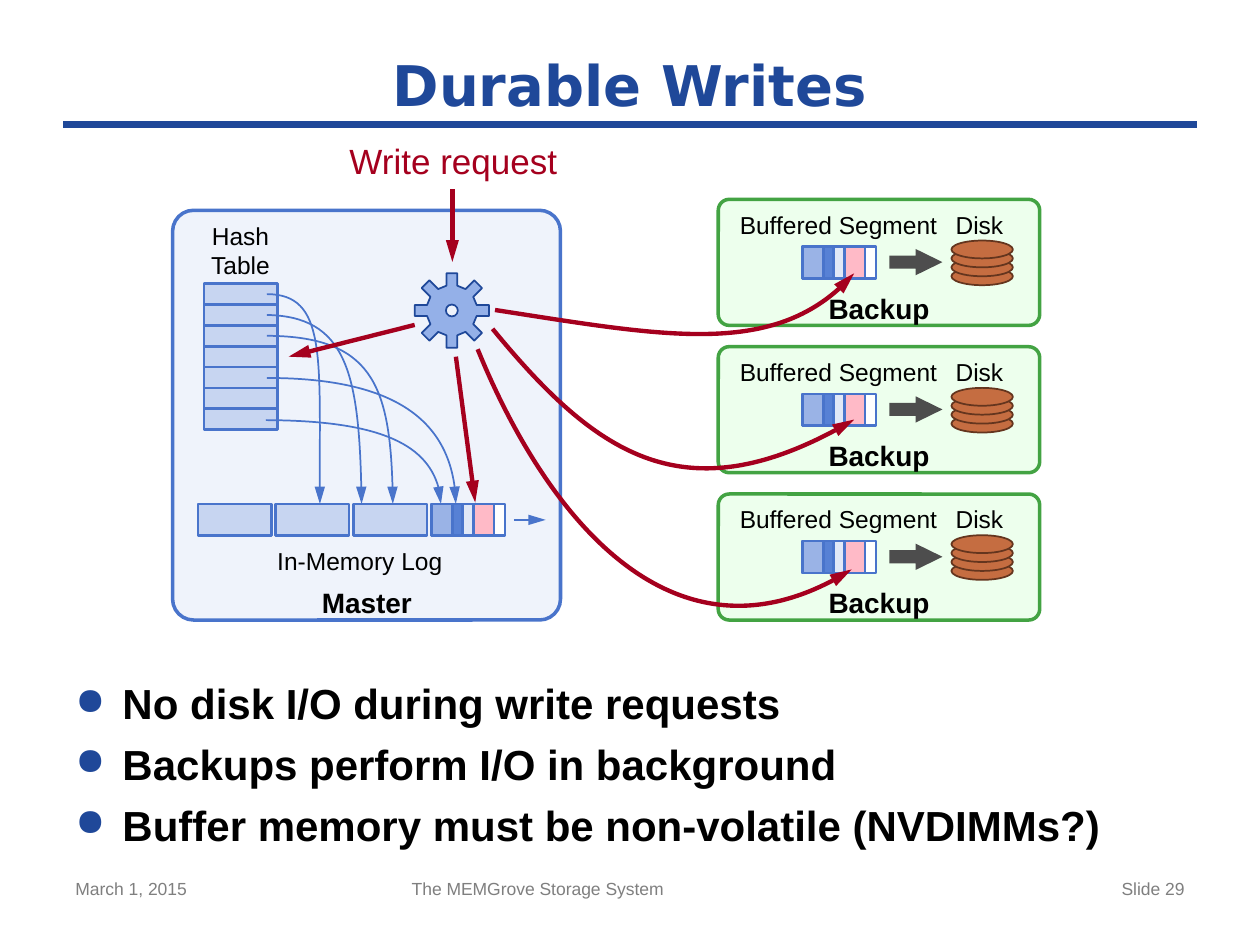
from math import cos, pi, sin

from lxml.etree import SubElement
from pptx import Presentation
from pptx.dml.color import RGBColor
from pptx.enum.shapes import MSO_CONNECTOR, MSO_SHAPE as SHAPE
from pptx.enum.text import MSO_ANCHOR as ANCHOR, PP_ALIGN as ALIGN
from pptx.oxml.ns import qn
from pptx.util import Cm, Pt

# Content: all lengths in centimetres
NAVY, BLUE, RED = "1F4899", "4974CB", "A5001E"
PALE, LIGHT = "EFF3FB", "C7D5F1"
BULLETS = [
    "No disk I/O during write requests",
    "Backups perform I/O in background",
    "Buffer memory must be non-volatile (NVDIMMs?)",
]
FOOTERS = [
    ("March 1, 2015", 1.27, 5.92, ALIGN.LEFT),
    ("The MEMGrove Storage System", 8.05, 9.53, ALIGN.LEFT),
    ("Slide 29", 18.21, 5.92, ALIGN.RIGHT),
]
SEGMENT_W, SEGMENT_H = 1.48, 0.64
OBJECTS = [(0.42, "9AB3E6"), (0.21, "5781D5"), (0.21, "E1E8F7"), (0.42, "FFBAC7")]
BACKUP_LEFT, BACKUP_TOP, BACKUP_STEP, BACKUP_COUNT = 14.48, 4.02, 2.97, 3
HASH_LEFT, HASH_TOP, HASH_ROWS, ROW_H = 4.11, 5.72, 7, 0.42
LOG_LEFT, LOG_TOP, LOG_STEP, FULL_SEGMENTS = 3.99, 10.16, 1.57, 3
GEAR_X, GEAR_Y, TEETH = 9.11, 6.26, 8
# Curves: start, two control points, end
HASH_POINTERS = [
    [(5.38, 5.93), (6.58, 5.93), (6.43, 7.29), (6.45, 10.16)],
    [(5.38, 6.35), (6.96, 6.38), (7.26, 7.59), (7.29, 10.16)],
    [(5.38, 6.77), (7.49, 6.78), (7.9, 7.87), (7.92, 10.16)],
    [(5.38, 7.62), (7.77, 7.62), (9.17, 8.46), (9.19, 10.16)],
    [(5.36, 8.47), (7.57, 8.48), (8.86, 9.02), (8.89, 10.16)],
]
REPLICATION = [
    [(9.98, 6.25), (13.28, 6.76), (15.72, 7.24), (17.22, 5.51)],
    [(9.93, 6.63), (11.99, 9.14), (13.87, 10.44), (17.22, 8.46)],
    [(9.63, 7.04), (10.9, 10.16), (13.54, 13.77), (17.17, 11.48)],
]
WRITE_STEPS = [
    ((9.12, 3.81), (9.12, 5.28)),
    ((8.36, 6.55), (5.82, 7.19)),
    ((9.19, 7.19), (9.58, 10.13)),
]

deck = Presentation()
deck.slide_width, deck.slide_height = Cm(25.4), Cm(19.05)
page = deck.slides.add_slide(deck.slide_layouts[6])


# Drawing helpers
def rgb(color):
    return RGBColor.from_string(color)


def paint(shape, fill=None, line=None, weight=1.5):
    shape.shadow.inherit = False
    if fill:
        shape.fill.solid()
        shape.fill.fore_color.rgb = rgb(fill)
    else:
        shape.fill.background()
    if line:
        shape.line.color.rgb = rgb(line)
        shape.line.width = Pt(weight)
    else:
        shape.line.fill.background()


def add_part(kind, left, top, width, height, adjust=(), **style):
    shape = page.shapes.add_shape(kind, Cm(left), Cm(top), Cm(width), Cm(height))
    for index, value in enumerate(adjust):
        shape.adjustments[index] = value
    paint(shape, **style)


def add_text(text, left, top, width, height, size=14, color="000000", bold=False,
             font="Arial", align=ALIGN.CENTER, anchor=ANCHOR.TOP, wrap=False,
             tight=True, bullet=False):
    box = page.shapes.add_textbox(Cm(left), Cm(top), Cm(width), Cm(height))
    frame = box.text_frame
    frame.word_wrap, frame.vertical_anchor = wrap, anchor
    if tight:
        frame.margin_left = frame.margin_right = frame.margin_top = frame.margin_bottom = 0
    for index, line in enumerate(text.split("\n")):
        para = frame.paragraphs[0] if index == 0 else frame.add_paragraph()
        para.alignment = align
        span = para.add_run()
        span.text = line
        span.font.name, span.font.size, span.font.bold = font, Pt(size), bold
        span.font.color.rgb = rgb(color)
        if bullet:
            para.space_before = Pt(6)
            props = para._p.get_or_add_pPr()
            props.set("marL", str(Cm(0.95)))
            props.set("indent", str(-Cm(0.95)))
            SubElement(SubElement(props, qn("a:buClr")), qn("a:srgbClr"), val=NAVY)
            SubElement(props, qn("a:buSzPct"), val="90000")
            SubElement(props, qn("a:buChar"), char="●")


def add_arrowhead(shape):
    SubElement(shape.line._get_or_add_ln(), qn("a:tailEnd"), type="triangle", w="med", len="lg")


def add_line(start, end, color=BLUE, weight=1.5, arrow=False):
    line = page.shapes.add_connector(MSO_CONNECTOR.STRAIGHT, *map(Cm, start + end))
    line.line.color.rgb, line.line.width = rgb(color), Pt(weight)
    if arrow:
        add_arrowhead(line)
    SubElement(line._element.spPr, qn("a:effectLst"))


def add_outline(points, close):
    points = [(Cm(x), Cm(y)) for x, y in points]
    builder = page.shapes.build_freeform(*points[0])
    builder.add_line_segments(points[1:], close=close)
    return builder.convert_to_shape()


def add_curve(controls, color, weight):
    def at(t):
        shares = [(1 - t) ** 3, 3 * t * (1 - t) ** 2, 3 * t * t * (1 - t), t ** 3]
        return [sum(s * c[axis] for s, c in zip(shares, controls)) for axis in (0, 1)]

    # Sampled points give the extent, then one Bezier segment replaces them
    shape = add_outline([at(step / 20) for step in range(21)], close=False)
    track = shape._element.spPr.find(".//" + qn("a:path"))
    for child in list(track):
        track.remove(child)
    move, bezier = (SubElement(track, qn(tag)) for tag in ("a:moveTo", "a:cubicBezTo"))
    for parent, (x, y) in zip([move] + [bezier] * 3, controls[:1] + controls[1:]):
        SubElement(parent, qn("a:pt"), x=str(Cm(x) - shape.left), y=str(Cm(y) - shape.top))
    paint(shape, line=color, weight=weight)
    add_arrowhead(shape)


def add_open_segment(left, top):
    add_part(SHAPE.RECTANGLE, left, top, SEGMENT_W, SEGMENT_H, fill="FFFFFF", line=BLUE)
    for width, fill in OBJECTS:
        add_part(SHAPE.RECTANGLE, left, top, width, SEGMENT_H, fill=fill, line=BLUE)
        left += width


def add_backup(left, top):
    add_part(SHAPE.ROUNDED_RECTANGLE, left, top, 6.48, 2.54, [0.087],
             fill="EDFFED", line="43A343", weight=2)
    add_open_segment(left + 1.7, top + 0.95)
    for disk in range(4):
        add_part(SHAPE.OVAL, left + 4.7, top + 1.37 - 0.18 * disk, 1.24, 0.36,
                 fill="C56D41", line="64351E", weight=1)
    add_text("Disk", left + 4.78, top + 0.21, 0.97, 0.6)
    add_text("Backup", left + 2.21, top + 1.85, 2.06, 0.69, size=16, bold=True)
    add_text("Buffered Segment", left + 0.43, top + 0.21, 3.99, 0.6)
    add_part(SHAPE.RIGHT_ARROW, left + 3.45, top + 1, 1.07, 0.53, [0.5, 1.02], fill="4D4D4D")


# Title, bullets and footer
add_line((1.27, 2.51), (24.13, 2.51), NAVY, 4)
add_text("Durable Writes", 1.27, 0.84, 22.86, 1.7, size=32, color=NAVY, bold=True,
         font="DejaVu Sans", anchor=ANCHOR.MIDDLE, wrap=True, tight=False)
add_text("\n".join(BULLETS), 1.27, 13.54, 22.86, 3.48, size=24, bold=True,
         align=ALIGN.LEFT, wrap=True, tight=False, bullet=True)
for text, left, width, align in FOOTERS:
    add_text(text, left, 17.58, width, 1.09, size=10, color="7F7F7F",
             align=align, wrap=True, tight=False)

# Backups
for index in range(BACKUP_COUNT):
    add_backup(BACKUP_LEFT, BACKUP_TOP + index * BACKUP_STEP)

# Master with its hash table
add_part(SHAPE.ROUNDED_RECTANGLE, 3.48, 4.24, 7.82, 8.26, [0.054], fill=PALE, line=BLUE, weight=2)
add_text("Master", 6.48, 11.81, 1.83, 0.69, size=16, bold=True)
add_text("In-Memory Log", 5.59, 11, 3.33, 0.6)
add_text("Hash Table", HASH_LEFT, 4.45, SEGMENT_W, 1.2, wrap=True)
add_part(SHAPE.RECTANGLE, HASH_LEFT, HASH_TOP, SEGMENT_W, HASH_ROWS * ROW_H, fill=LIGHT, line=BLUE)
for row in range(1, HASH_ROWS):
    y = HASH_TOP + row * ROW_H
    add_line((HASH_LEFT, y), (HASH_LEFT + SEGMENT_W, y))

# Gear: each tooth is a block turned around the centre
gear = []
for tooth in range(TEETH):
    angle = 2 * pi * tooth / TEETH
    for across, out in [(-0.11, 0.5), (-0.11, 0.75), (0.11, 0.75), (0.11, 0.5)]:
        gear.append((GEAR_X + across * cos(angle) + out * sin(angle),
                     GEAR_Y + across * sin(angle) - out * cos(angle)))
paint(add_outline(gear, close=True), fill="94B0E8", line=NAVY, weight=1)
add_part(SHAPE.OVAL, GEAR_X - 0.12, GEAR_Y - 0.12, 0.24, 0.24, fill=PALE, line=NAVY, weight=1)

# Log segments
for index in range(FULL_SEGMENTS):
    add_part(SHAPE.RECTANGLE, LOG_LEFT + index * LOG_STEP, LOG_TOP, SEGMENT_W, SEGMENT_H,
             fill=LIGHT, line=BLUE)
add_open_segment(LOG_LEFT + FULL_SEGMENTS * LOG_STEP, LOG_TOP)
add_line((10.36, 10.48), (11, 10.48), arrow=True)

# Pointers and write flow
for controls in HASH_POINTERS:
    add_curve(controls, BLUE, 1)
for start, end in WRITE_STEPS:
    add_line(start, end, RED, 2.5, arrow=True)
for controls in REPLICATION:
    add_curve(controls, RED, 2.5)
add_text("Write request", 6.78, 2.69, 4.72, 1.12, size=20, color=RED, tight=False)

deck.save("out.pptx")
